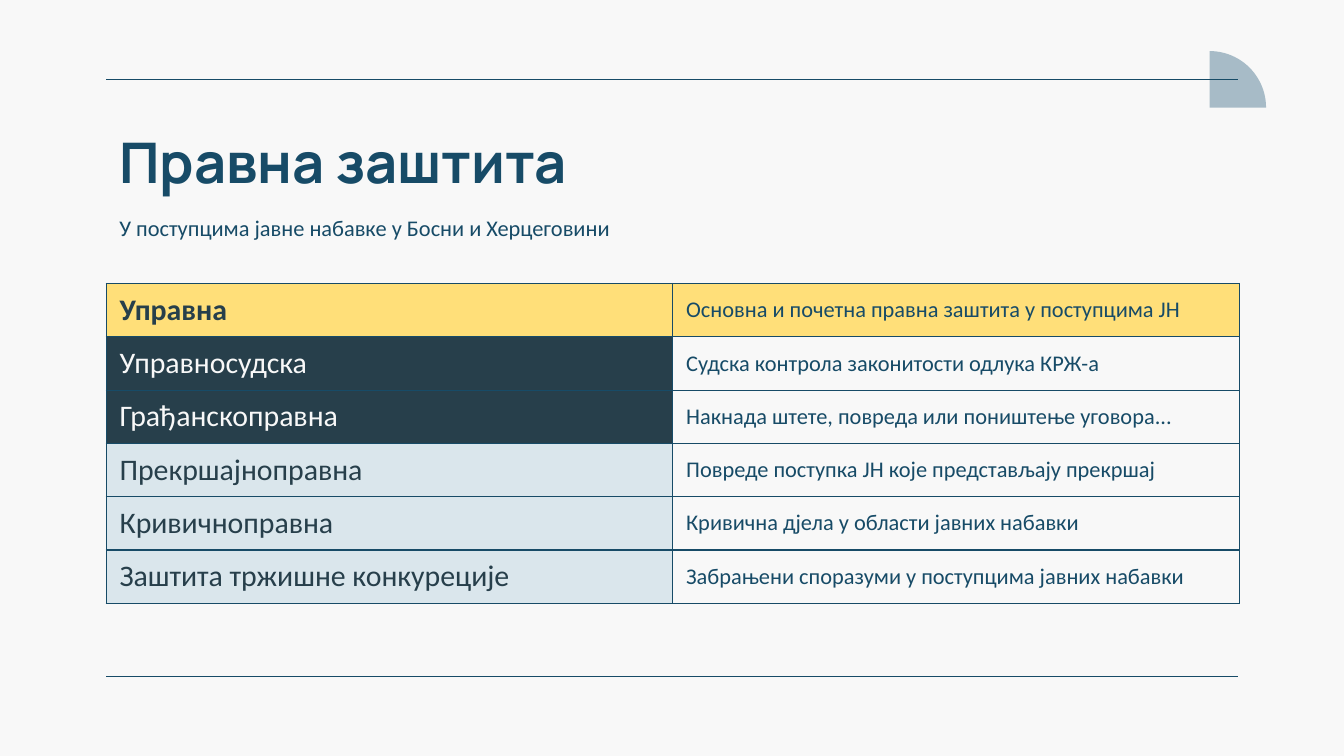
from lxml import etree
from pptx import Presentation
from pptx.dml.color import RGBColor
from pptx.enum.shapes import MSO_CONNECTOR, MSO_SHAPE
from pptx.enum.text import MSO_ANCHOR
from pptx.oxml.ns import qn
from pptx.util import Inches, Pt

STRAIGHT = MSO_CONNECTOR.STRAIGHT
PIE_WEDGE = MSO_SHAPE.PIE_WEDGE
TOP, MIDDLE = MSO_ANCHOR.TOP, MSO_ANCHOR.MIDDLE

PAPER = RGBColor(0xF8, 0xF8, 0xF8)
BLUE = RGBColor(0x17, 0x4B, 0x67)
DARK = RGBColor(0x27, 0x3F, 0x4B)
YELLOW = RGBColor(0xFF, 0xDF, 0x79)
PALE = RGBColor(0xDA, 0xE6, 0xEC)
GREY_BLUE = RGBColor(0xA7, 0xBB, 0xC7)

TITLE = "Правна заштита"
SUBTITLE = "У поступцима јавне набавке у Босни и Херцеговини"
PROTECTIONS = [
    ("Управна", "Основна и почетна правна заштита у поступцима ЈН", YELLOW),
    ("Управносудска", "Судска контрола законитости одлука КРЖ-а", DARK),
    ("Грађанскоправна", "Накнада штете, повреда или поништење уговора...", DARK),
    ("Прекршајноправна", "Повреде поступка ЈН које представљају прекршај", PALE),
    ("Кривичноправна", "Кривична дјела у области јавних набавки", PALE),
    ("Заштита тржишне конкуреције", "Забрањени споразуми у поступцима јавних набавки", PALE),
]

WIDTH = Inches(10)
HEIGHT = WIDTH * 9 // 16
MARGIN = Inches(0.79)
CONTENT_WIDTH = Inches(8.43)
RULE_TOP = Inches(0.59)
RULE_BOTTOM = HEIGHT - RULE_TOP
WEDGE = Inches(0.42)
TABLE_TOP, TABLE_HEIGHT = Inches(2.11), Inches(2.38)
INSET = Inches(0.1)
LINE_WIDTH = Pt(0.75)


def write(frame, text, size, color, font="Calibri", bold=False):
    frame.word_wrap = True
    run = frame.paragraphs[0].add_run()
    run.text = text
    run.font.name = font
    run.font.size = Pt(size)
    run.font.bold = bold
    run.font.color.rgb = color


def add_text(slide, top, height, *content, **style):
    box = slide.shapes.add_textbox(MARGIN, top, CONTENT_WIDTH, height)
    frame = box.text_frame
    frame.margin_left = frame.margin_right = INSET
    frame.margin_top = frame.margin_bottom = INSET
    frame.vertical_anchor = TOP
    write(frame, *content, **style)


def add_rule(slide, y):
    rule = slide.shapes.add_connector(STRAIGHT, MARGIN, y, WIDTH - MARGIN, y)
    rule.line.color.rgb = BLUE
    rule.line.width = LINE_WIDTH
    etree.SubElement(rule._element.spPr, qn("a:effectLst"))


def add_wedge(slide):
    wedge = slide.shapes.add_shape(
        PIE_WEDGE, WIDTH - MARGIN - WEDGE // 2, RULE_TOP - WEDGE // 2, WEDGE, WEDGE)
    wedge.rotation = 90
    wedge.shadow.inherit = False
    wedge.fill.solid()
    wedge.fill.fore_color.rgb = GREY_BLUE
    wedge.line.fill.background()


def add_borders(cell):
    properties = cell._tc.get_or_add_tcPr()
    for index, side in enumerate(("a:lnL", "a:lnR", "a:lnT", "a:lnB")):
        border = etree.Element(qn(side), w=str(LINE_WIDTH))
        fill = etree.SubElement(border, qn("a:solidFill"))
        etree.SubElement(fill, qn("a:srgbClr"), val=str(BLUE))
        properties.insert(index, border)


def fill_cell(cell, text, size, color, fill, bold=False):
    cell.margin_left = cell.margin_right = INSET
    cell.margin_top = cell.margin_bottom = 0
    cell.vertical_anchor = MIDDLE
    if fill is None:
        cell.fill.background()
    else:
        cell.fill.solid()
        cell.fill.fore_color.rgb = fill
    write(cell.text_frame, text, size, color, bold=bold)
    add_borders(cell)


def add_protection_table(slide):
    table = slide.shapes.add_table(
        len(PROTECTIONS), 2, MARGIN, TABLE_TOP, CONTENT_WIDTH, TABLE_HEIGHT).table
    table.first_row = table.horz_banding = False
    for row, (name, description, fill) in enumerate(PROTECTIONS):
        main_row = fill == YELLOW
        name_color = PAPER if fill == DARK else DARK
        fill_cell(table.cell(row, 0), name, 16, name_color, fill, bold=main_row)
        fill_cell(table.cell(row, 1), description, 12, BLUE, fill if main_row else None)


def main():
    presentation = Presentation()
    presentation.slide_width, presentation.slide_height = WIDTH, HEIGHT
    slide = presentation.slides.add_slide(presentation.slide_layouts[6])
    slide.background.fill.solid()
    slide.background.fill.fore_color.rgb = PAPER
    add_wedge(slide)
    for y in (RULE_TOP, RULE_BOTTOM):
        add_rule(slide, y)
    add_text(slide, Inches(0.85), Inches(0.63), TITLE, 30, BLUE, font="Manrope", bold=True)
    add_protection_table(slide)
    add_text(slide, Inches(1.49), Inches(0.43), SUBTITLE, 12, BLUE)
    presentation.save("out.pptx")


if __name__ == "__main__":
    main()
